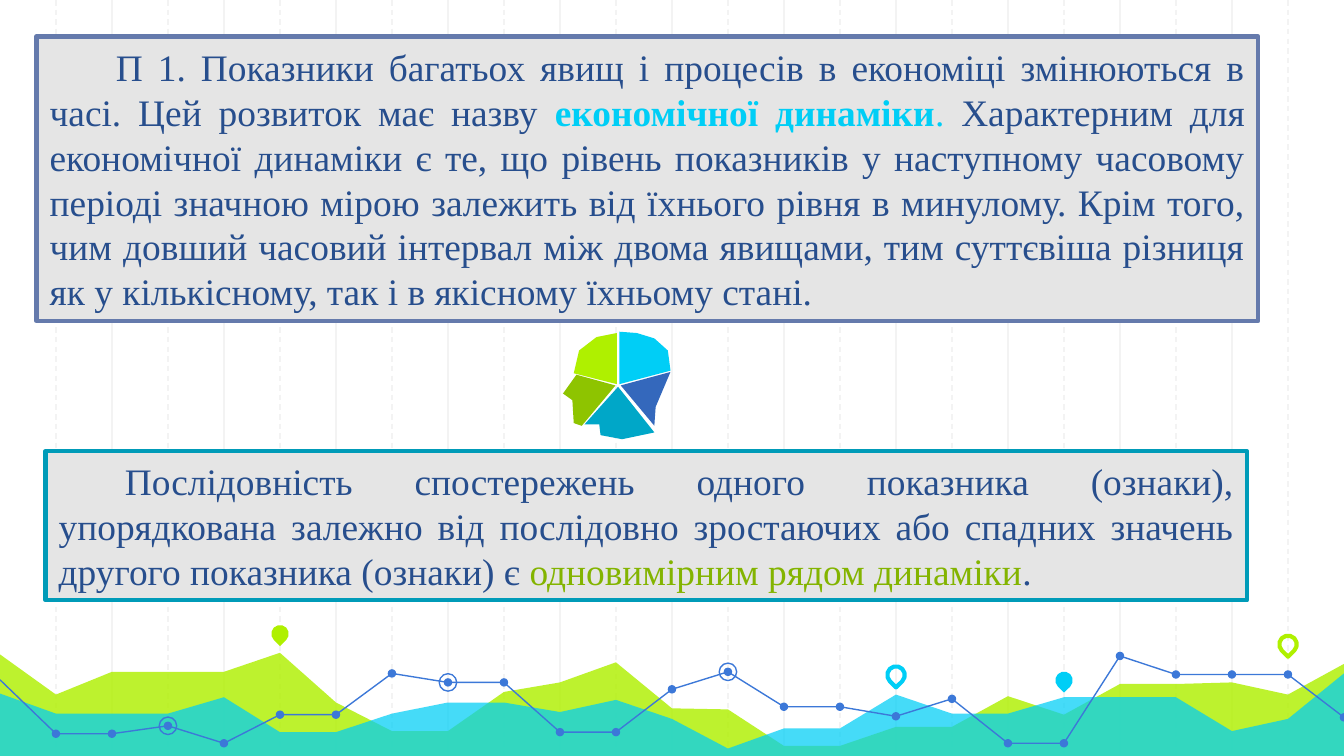
"""Build a slide on economic dynamics over a chart-like landscape."""
from lxml.etree import SubElement
from pptx import Presentation
from pptx.dml.color import RGBColor
from pptx.enum.dml import MSO_LINE
from pptx.enum.shapes import MSO_CONNECTOR, MSO_SHAPE
from pptx.enum.text import MSO_ANCHOR, MSO_AUTO_SIZE, PP_ALIGN
from pptx.oxml.ns import qn
from pptx.util import Cm, Pt

COLORS = {
    "grid": "F3F3F3", "lime": "AFF000", "cyan": "00CEF6", "trend": "3C78D8",
    "olive": "8EC400", "blue": "3468BC", "teal": "00A7C8", "panel": "E5E5E5",
    "slate": "657AAC", "sea": "009BB8", "navy": "274E8D", "moss": "83B400",
}


def paint(shape, fill=None, line=None, width=0.75):
    shape.shadow.inherit = False
    if fill:
        shape.fill.solid()
        shape.fill.fore_color.rgb = RGBColor.from_string(COLORS[fill])
    else:
        shape.fill.background()
    if line:
        shape.line.color.rgb = RGBColor.from_string(COLORS[line])
        shape.line.width = Pt(width)
    else:
        shape.line.fill.background()


def outline(points, close=True, scale=1.0, left=0, top=0):
    builder = slide.shapes.build_freeform(*points[0], scale=scale)
    builder.add_line_segments(points[1:], close=close)
    return builder.convert_to_shape(left, top)


prs = Presentation()
prs.slide_width, prs.slide_height = Cm(25.4), Cm(14.29)
slide = prs.slides.add_slide(prs.slide_layouts[6])
columns = [round(prs.slide_width * i / 24) for i in range(25)]

for dashed, grid_columns in ((False, columns[2:24:2]), (True, columns[1:24:2])):
    for x in grid_columns:
        grid_line = slide.shapes.add_connector(MSO_CONNECTOR.STRAIGHT, x, 0, x, prs.slide_height)
        grid_line.line.color.rgb = RGBColor.from_string(COLORS["grid"])
        grid_line.line.width = Pt(0.75)
        if dashed:
            grid_line.line.dash_style = MSO_LINE.DASH
        SubElement(grid_line._element.spPr, qn("a:effectLst"))

areas = [
    ("lime", 82, [12.37, 13.13, 12.7, 12.7, 12.7, 12.34, 13.28, 13.82, 13.82, 13.08, 12.9, 12.52, 13.39,
                  13.41, 14.1, 14.1, 13.74, 13.74, 13.16, 13.51, 12.93, 12.93, 12.9, 13.13, 12.55]),
    ("cyan", 73, [13.11, 13.49, 13.49, 13.49, 13.18, 13.84, 13.84, 13.49, 13.28, 13.28, 13.46, 13.23, 13.59,
                  14.15, 13.77, 13.77, 13.13, 13.49, 13.49, 13.18, 13.18, 13.18, 13.82, 13.59, 12.73]),
]
for color, opacity, heights in areas:
    ridge = [(x, Cm(y)) for x, y in zip(columns, heights)]
    area = outline(ridge + [(columns[-1], prs.slide_height), (0, prs.slide_height)])
    paint(area, color)
    area_color = area._element.spPr.find(qn("a:solidFill"))[0]
    SubElement(area_color, qn("a:alpha"), val=str(opacity * 1000))

trend_heights = [12.85, 13.87, 13.87, 13.72, 14.05, 13.51, 13.51, 12.73, 12.9, 12.9, 13.84, 13.84, 13.03,
                 12.7, 13.36, 13.36, 13.54, 13.21, 14.05, 14.05, 12.4, 12.75, 12.75, 12.75, 13.56]
trend = [(x, Cm(y)) for x, y in zip(columns, trend_heights)]
paint(outline(trend, close=False), line="trend")

markers = [(x, y, 0.16, "trend", None) for x, y in trend[1:]]
markers += [(*trend[i], 0.33, None, "trend") for i in (3, 8, 13)]
for x, y, size, fill, line in markers:
    marker = slide.shapes.add_shape(
        MSO_SHAPE.OVAL, x - Cm(size / 2), y - Cm(size / 2), Cm(size), Cm(size))
    paint(marker, fill, line)

pins = [(5, 11.98, "lime", None), (16, 12.76, None, "cyan"),
        (19, 12.86, "cyan", None), (23, 12.18, None, "lime")]
pin_size = Cm(0.33)
for column, y, fill, line in pins:
    pin = slide.shapes.add_shape(
        MSO_SHAPE.TEAR, columns[column] - pin_size // 2, Cm(y) - pin_size // 2, pin_size, pin_size)
    pin.rotation = 135
    paint(pin, fill, line, 2.25)

head_pieces = {
    "cyan": [(42, 39), (42, 0), (55, 1), (68, 5), (78, 14), (80, 29)],
    "lime": [(40, 39), (40, 1), (25, 4), (12, 14), (8, 31)],
    "olive": [(39, 40), (10, 32), (0, 46), (7, 51), (8, 68), (14, 70)],
    "blue": [(43, 40), (80, 30), (69, 56), (68, 70)],
    "teal": [(41, 41), (16, 69), (27, 69), (28, 77), (44, 80), (68, 75)],
}
for color, points in head_pieces.items():
    paint(outline(points, scale=Cm(2.54) / 100, left=Cm(10.64), top=Cm(6.27)), color)

statements = [
    (0.69, 0.69, 23.09, 5.38, "slate", [
        ("П 1. Показники багатьох явищ і процесів в економіці змінюються в часі. "
         "Цей розвиток має назву ", "navy", False),
        ("економічної динаміки", "cyan", True),
        (". ", "cyan", False),
        ("Характерним для економічної динаміки є те, що рівень показників у наступному часовому "
         "періоді значною мірою залежить від їхнього рівня в минулому. Крім того, чим довший часовий "
         "інтервал між двома явищами, тим суттєвіша різниця як у кількісному, так і в якісному "
         "їхньому стані.", "navy", False)]),
    (0.86, 8.53, 22.71, 2.82, "sea", [
        ("Послідовність спостережень одного показника (ознаки), упорядкована залежно від послідовно "
         "зростаючих або спадних значень другого показника (ознаки) є ", "navy", False),
        ("одновимірним рядом динаміки", "moss", False),
        (".", "navy", False)]),
]
for left, top, width, height, border, runs in statements:
    statement = slide.shapes.add_shape(MSO_SHAPE.RECTANGLE, Cm(left), Cm(top), Cm(width), Cm(height))
    paint(statement, "panel", border, 2.25)
    frame = statement.text_frame
    frame.word_wrap = True
    frame.auto_size = MSO_AUTO_SIZE.SHAPE_TO_FIT_TEXT
    frame.vertical_anchor = MSO_ANCHOR.MIDDLE
    paragraph = frame.paragraphs[0]
    paragraph.alignment = PP_ALIGN.JUSTIFY
    paragraph._p.get_or_add_pPr().set("indent", str(Cm(1.25)))
    for text, color, bold in runs:
        run = paragraph.add_run()
        run.text = text
        run.font.name = "Times New Roman"
        run.font.size = Pt(20)
        run.font.bold = bold
        run.font.color.rgb = RGBColor.from_string(COLORS[color])

prs.save("out.pptx")
